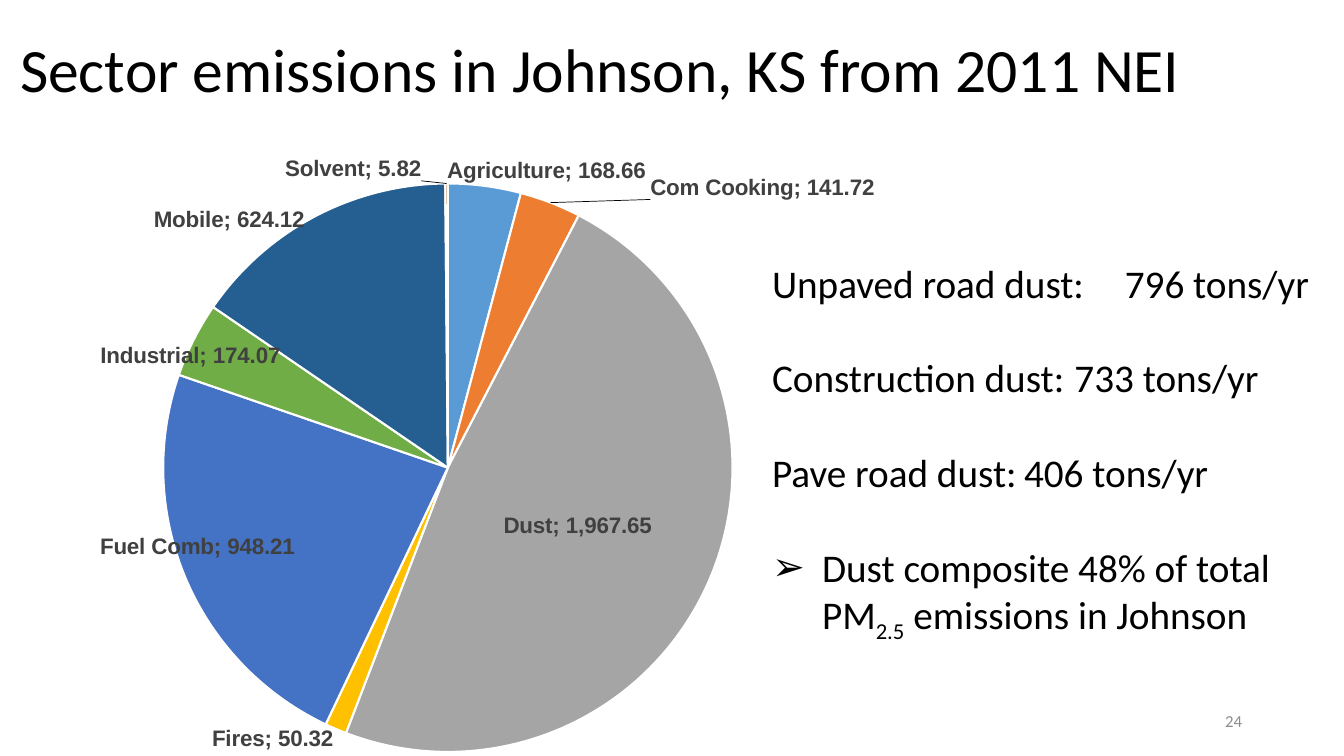
import math

import pptx
import pptx.chart.data
import pptx.dml.color
import pptx.enum.chart
import pptx.enum.text
import pptx.oxml
import pptx.oxml.ns
import pptx.util

PX = 12192000 / 1344
RGB = pptx.dml.color.RGBColor
ALIGN = pptx.enum.text.PP_ALIGN
ANCHOR = pptx.enum.text.MSO_ANCHOR

BLACK = RGB(0x00, 0x00, 0x00)
WHITE = RGB(0xFF, 0xFF, 0xFF)
GREY = RGB(0x8C, 0x8C, 0x8C)
LABEL_GREY = RGB(0x40, 0x40, 0x40)

# Sector, tons per year, slice colour, label centre on the slide in px
# (None leaves the label in the middle of its slice)
SECTORS = [
    ("Agriculture", 168.66, RGB(0x5B, 0x9B, 0xD5), (546, 168)),
    ("Com Cooking", 141.72, RGB(0xED, 0x7D, 0x31), (762, 185)),
    ("Dust", 1967.65, RGB(0xA5, 0xA5, 0xA5), None),
    ("Fires", 50.32, RGB(0xFF, 0xC0, 0x00), (273, 735)),
    ("Fuel Comb", 948.21, RGB(0x44, 0x72, 0xC4), (199, 544)),
    ("Industrial", 174.07, RGB(0x70, 0xAD, 0x47), (191, 353)),
    ("Mobile", 624.12, RGB(0x25, 0x5E, 0x91), (230, 217)),
    ("Solvent", 5.82, RGB(0x9E, 0x48, 0x0E), (353, 166)),
]
PIE_CENTRE = (448, 465)
PIE_RADIUS = 283
PLOT = {"x": 0.391, "y": 0.062, "w": 0.473, "h": 0.938}

# Dust source, amount, tab stop in px
DUST_SOURCES = [
    ("Unpaved road dust:", "796 tons/yr", 330),
    ("Construction dust:", "733 tons/yr", 338),
    ("Pave road dust:", "406 tons/yr", 342),
]


def px(n):
    return pptx.util.Emu(round(n * PX))


def xml(markup):
    """Parse markup whose root tag may use the a: and c: prefixes."""
    head, rest = markup.split(">", 1)
    close = "/" if head.endswith("/") else ""
    head = head.rstrip("/")
    return pptx.oxml.parse_xml(f"{head} {pptx.oxml.ns.nsdecls('a', 'c')}{close}>{rest}")


def place(sp, box):
    sp.left, sp.top, sp.width, sp.height = (px(n) for n in box)


def add_run(p, text, size=28, color=BLACK, subscript=False):
    r = p.add_run()
    r.text = text
    r.font.name = "Calibri"
    r.font.size = pptx.util.Pt(size)
    r.font.color.rgb = color
    if subscript:
        r.font._element.set("baseline", "-25000")
    return r


def add_title(s, box):
    sp = s.shapes.title
    place(sp, box)
    tf = sp.text_frame
    tf.auto_size = pptx.enum.text.MSO_AUTO_SIZE.NONE
    tf.vertical_anchor = ANCHOR.MIDDLE
    p = tf.paragraphs[0]
    p.alignment = ALIGN.LEFT
    p.line_spacing = 0.9
    add_run(p, "Sector emissions in Johnson, KS from 2011 NEI", size=44)


def manual_layout(inner=False, **fractions):
    target = '<c:layoutTarget val="inner"/>' if inner else ""
    if inner:
        target += '<c:xMode val="edge"/><c:yMode val="edge"/>'
    sizes = "".join(f'<c:{k} val="{v:.3f}"/>' for k, v in fractions.items())
    return xml(f"<c:layout><c:manualLayout>{target}{sizes}</c:manualLayout></c:layout>")


def label_element(i, box):
    """Label of one slice, moved from mid-slice to its centre on the slide."""
    values = [sector[1] for sector in SECTORS]
    label = xml(
        f'<c:dLbl><c:idx val="{i}"/>'
        '<c:numFmt formatCode="#,##0.00" sourceLinked="0"/>'
        '<c:spPr><a:noFill/><a:ln><a:noFill/></a:ln></c:spPr>'
        '<c:txPr><a:bodyPr wrap="none"/><a:p><a:pPr><a:defRPr sz="1600" b="1">'
        f'<a:solidFill><a:srgbClr val="{LABEL_GREY}"/></a:solidFill>'
        '<a:latin typeface="Arial"/></a:defRPr></a:pPr><a:endParaRPr/></a:p></c:txPr>'
        '<c:dLblPos val="ctr"/><c:showLegendKey val="0"/><c:showVal val="1"/>'
        '<c:showCatName val="1"/><c:showSerName val="0"/><c:showPercent val="0"/>'
        '<c:showBubbleSize val="0"/><c:separator>; </c:separator></c:dLbl>'
    )
    target = SECTORS[i][3]
    if target:
        angle = 2 * math.pi * (sum(values[:i]) + values[i] / 2) / sum(values)
        x = PIE_CENTRE[0] + PIE_RADIUS / 2 * math.sin(angle)
        y = PIE_CENTRE[1] - PIE_RADIUS / 2 * math.cos(angle)
        label.insert(1, manual_layout(x=(target[0] - x) / box[2], y=(target[1] - y) / box[3]))
    return label


def add_sector_pie(s, box):
    data = pptx.chart.data.CategoryChartData(number_format="#,##0.00")
    data.categories = [sector[0] for sector in SECTORS]
    data.add_series("Series 1", [sector[1] for sector in SECTORS])
    chart = s.shapes.add_chart(
        pptx.enum.chart.XL_CHART_TYPE.PIE, *(px(n) for n in box), data
    ).chart
    chart.has_legend = False
    chart.has_title = False
    chart.font.name = "Arial"
    chart.font.size = pptx.util.Pt(16)
    chart.font.bold = True
    chart.font.color.rgb = BLACK
    plot = chart.plots[0]
    plot.vary_by_categories = True

    plot_area = chart._chartSpace.chart.plotArea
    for layout in plot_area.findall(pptx.oxml.ns.qn("c:layout")):
        plot_area.remove(layout)
    plot_area.insert(0, manual_layout(inner=True, **PLOT))

    series = plot.series[0]
    labels = series.data_labels
    labels.number_format = "#,##0.00"
    labels.number_format_is_linked = False
    labels.show_value = True
    labels.show_category_name = True
    labels.font.color.rgb = LABEL_GREY
    group = labels._element
    for i, sector in enumerate(SECTORS):
        fmt = series.points[i].format
        fmt.fill.solid()
        fmt.fill.fore_color.rgb = sector[2]
        fmt.line.color.rgb = WHITE
        fmt.line.width = pptx.util.Pt(1.5)
        group.insert(i, label_element(i, box))
    for old in group.findall(pptx.oxml.ns.qn("c:showLeaderLines")):
        group.remove(old)
    group.append(xml('<c:showLeaderLines val="1"/>'))
    group.append(xml(
        '<c:leaderLines><c:spPr><a:ln w="6350"><a:solidFill>'
        f'<a:srgbClr val="{BLACK}"/></a:solidFill></a:ln></c:spPr></c:leaderLines>'
    ))


def set_bullet(p, indent=0, char=None):
    pPr = p._p.get_or_add_pPr()
    pPr.set("marL", str(px(indent)))
    pPr.set("indent", str(-px(indent)))
    if char:
        pPr.append(xml('<a:buFont typeface="Arial"/>'))
        pPr.append(xml(f'<a:buChar char="{char}"/>'))
    else:
        pPr.append(xml("<a:buNone/>"))
    return pPr


def add_dust_notes(s, box):
    sp = s.placeholders[1]
    place(sp, box)
    tf = sp.text_frame
    tf.word_wrap = True
    tf.auto_size = pptx.enum.text.MSO_AUTO_SIZE.NONE
    tf.vertical_anchor = ANCHOR.TOP
    for i, (source, amount, stop) in enumerate(DUST_SOURCES):
        p = tf.add_paragraph() if i else tf.paragraphs[0]
        p.space_before = pptx.util.Pt(34 if i else 0)
        set_bullet(p).append(
            xml(f'<a:tabLst><a:tab pos="{px(stop)}" algn="l"/></a:tabLst>'))
        add_run(p, f"{source}\t{amount}")
    p = tf.add_paragraph()
    p.space_before = pptx.util.Pt(34)
    set_bullet(p, indent=50, char="➢")
    add_run(p, "Dust composite 48% of total PM")
    add_run(p, "2.5", subscript=True)
    add_run(p, " emissions in Johnson")


def add_slide_number(s, box):
    tf = s.shapes.add_textbox(*(px(n) for n in box)).text_frame
    tf.word_wrap = True
    tf.vertical_anchor = ANCHOR.MIDDLE
    p = tf.paragraphs[0]
    p.alignment = ALIGN.RIGHT
    add_run(p, "24", size=12, color=GREY)


def main():
    prs = pptx.Presentation()
    prs.slide_width, prs.slide_height = px(1344), px(756)
    s = prs.slides.add_slide(prs.slide_layouts[1])
    add_title(s, (10, 0, 1194, 146))
    add_slide_number(s, (950, 701, 302, 40))
    add_sector_pie(s, (-339, 146, 1254, 607))
    add_dust_notes(s, (762, 254, 597, 390))
    prs.save("out.pptx")


if __name__ == "__main__":
    main()
